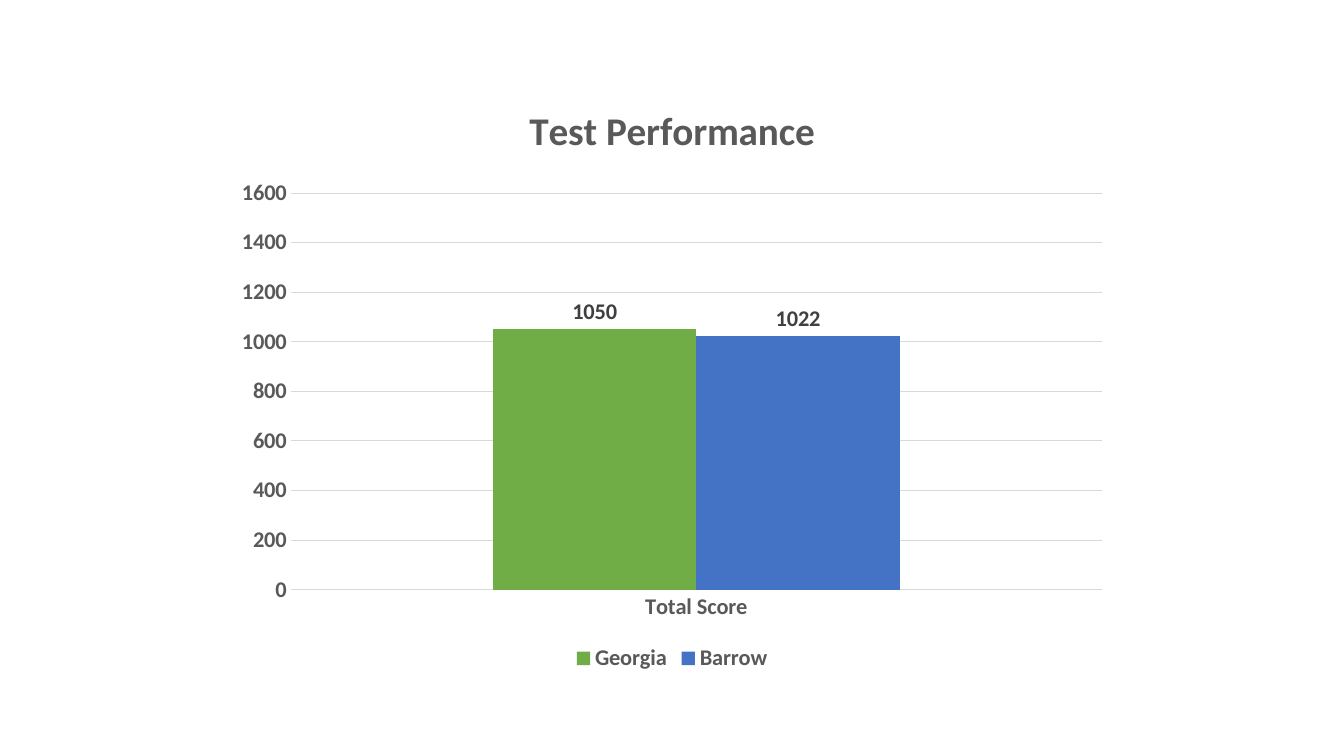
from dataclasses import dataclass

from pptx import Presentation
from pptx.chart.data import CategoryChartData
from pptx.dml.color import RGBColor as RGB
from pptx.enum.chart import XL_CHART_TYPE as ChartType
from pptx.enum.chart import XL_LABEL_POSITION as LabelPos
from pptx.enum.chart import XL_LEGEND_POSITION as LegendPos
from pptx.enum.chart import XL_TICK_MARK as Tick
from pptx.util import Inches, Pt


@dataclass(frozen=True)
class Theme:
    font: str = "Calibri"
    body: int = 16
    title: int = 28
    text: str = "595959"
    label: str = "404040"
    rule: str = "D9D9D9"
    rule_width: float = 0.75


THEME = Theme()
SCORES = {"Georgia": (1050, "70AD47"), "Barrow": (1022, "4472C4")}


def set_attrs(obj, values):
    for name, value in values.items():
        setattr(obj, name, value)


def style_font(font, size, color):
    set_attrs(font, {"name": THEME.font, "size": Pt(size), "bold": True})
    font.color.rgb = RGB.from_string(color)


def style_line(line):
    line.color.rgb = RGB.from_string(THEME.rule)
    line.width = Pt(THEME.rule_width)


def style_axes(chart):
    for axis in (chart.category_axis, chart.value_axis):
        set_attrs(axis, {"major_tick_mark": Tick.NONE, "minor_tick_mark": Tick.NONE})
        style_font(axis.tick_labels.font, THEME.body, THEME.text)
    style_line(chart.category_axis.format.line)
    value_axis = chart.value_axis
    set_attrs(value_axis, {"minimum_scale": 0, "maximum_scale": 1600,
                           "major_unit": 200, "has_major_gridlines": True})
    style_line(value_axis.major_gridlines.format.line)
    value_axis.format.line.fill.background()


def style_bars(plot):
    set_attrs(plot, {"gap_width": 199, "overlap": 0, "vary_by_categories": False})
    for series, (_, color) in zip(plot.series, SCORES.values()):
        series.format.fill.solid()
        series.format.fill.fore_color.rgb = RGB.from_string(color)
        labels = series.data_labels
        set_attrs(labels, {"show_value": True, "position": LabelPos.OUTSIDE_END})
        style_font(labels.font, THEME.body, THEME.label)


def add_score_chart(slide, box):
    data = CategoryChartData()
    data.categories = ["Total Score"]
    for name, (score, _) in SCORES.items():
        data.add_series(name, [score])
    chart = slide.shapes.add_chart(ChartType.COLUMN_CLUSTERED, *box, data).chart
    style_font(chart.font, THEME.body, THEME.text)

    chart.has_title = True
    tf = chart.chart_title.text_frame
    tf.text = "Test Performance"
    p = tf.paragraphs[0]
    for font in (p.font, p.runs[0].font):
        style_font(font, THEME.title, THEME.text)
    chart.chart_title.include_in_layout = False

    chart.has_legend = True
    set_attrs(chart.legend, {"position": LegendPos.BOTTOM, "include_in_layout": False})
    style_font(chart.legend.font, THEME.body, THEME.text)
    style_axes(chart)
    style_bars(chart.plots[0])


def main():
    prs = Presentation()
    set_attrs(prs, {"slide_width": Inches(13.33), "slide_height": Inches(7.5)})
    w, h = prs.slide_width, prs.slide_height
    slide = prs.slides.add_slide(prs.slide_layouts[6])
    box = (w // 6, int(h * 0.105), w * 2 // 3, int(h * 0.79))
    add_score_chart(slide, box)
    prs.save("out.pptx")


if __name__ == "__main__":
    main()
